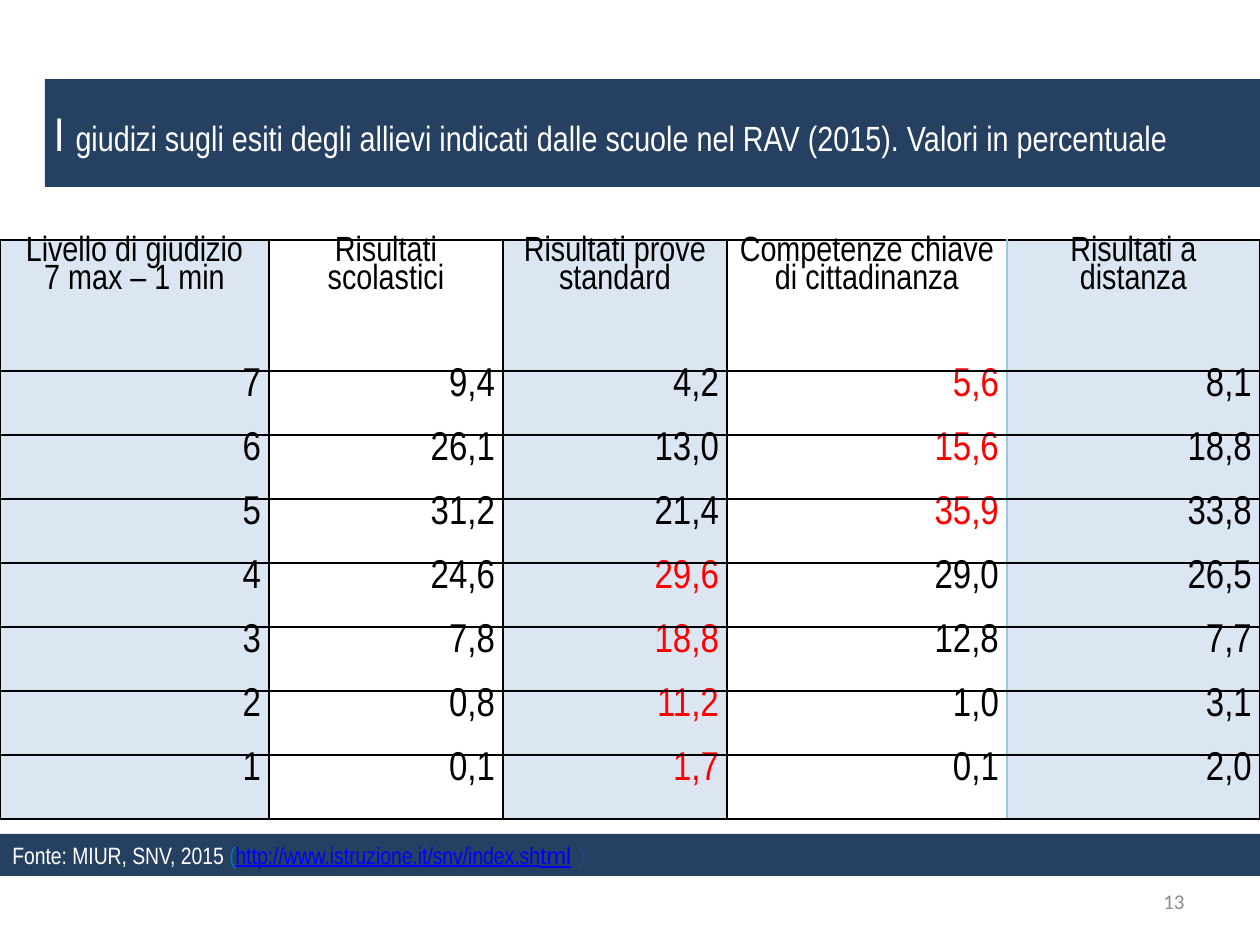
"""Builds the slide with the table of school self-assessment judgements."""
from lxml.etree import SubElement
from pptx import Presentation
from pptx.dml.color import RGBColor
from pptx.enum.shapes import MSO_SHAPE as Shape
from pptx.enum.text import MSO_ANCHOR as Anchor, MSO_AUTO_SIZE as AutoSize, PP_ALIGN as Align
from pptx.oxml.ns import qn
from pptx.util import Pt

PX = 914400 // 126
NAVY = RGBColor(0x25, 0x40, 0x61)
PALE = RGBColor(0xDC, 0xE6, 0xF2)
WHITE = RGBColor(0xFF, 0xFF, 0xFF)
BLACK = RGBColor(0x00, 0x00, 0x00)
RED = RGBColor(0xFF, 0x00, 0x00)
CYAN = RGBColor(0x93, 0xCD, 0xDD)
GREY = RGBColor(0x8C, 0x8C, 0x8C)
BLUE = RGBColor(0x00, 0x70, 0xC0)
LINK = RGBColor(0x00, 0x00, 0xFF)
DARK_BLUE = RGBColor(0x1F, 0x49, 0x7D)
NARROW = "Arial Narrow"

TITLE = [
    ("I ", dict(size=27)),
    ("giudizi sugli esiti degli allievi indicati dalle scuole nel RAV (2015). "
     "Valori in percentuale", dict(size=20)),
]
SOURCE = [
    ("Fonte: MIUR, SNV, 2015 ", {}),
    ("(", dict(color=BLUE)),
    ("http://www.istruzione.it/snv/index.sh", dict(color=LINK, underline=True)),
    ("tml", dict(color=LINK, underline=True, font="Arial")),
    (" ", dict(font="Arial")),
    (").", dict(color=DARK_BLUE, font="Arial")),
]
HEADERS = [
    ["Livello di giudizio", "7 max – 1 min"],
    ["Risultati scolastici"],
    ["Risultati prove standard"],
    ["Competenze chiave di cittadinanza"],
    ["Risultati a distanza"],
]
ROWS = [
    ("7", "9,4", "4,2", "5,6", "8,1"),
    ("6", "26,1", "13,0", "15,6", "18,8"),
    ("5", "31,2", "21,4", "35,9", "33,8"),
    ("4", "24,6", "29,6", "29,0", "26,5"),
    ("3", "7,8", "18,8", "12,8", "7,7"),
    ("2", "0,8", "11,2", "1,0", "3,1"),
    ("1", "0,1", "1,7", "0,1", "2,0"),
]
RED_LEVELS = {2: "4321", 3: "765"}
COLUMN_WIDTHS = [269, 234, 224, 280, 253]
HEADER_HEIGHT, ROW_HEIGHT = 131, 64
TABLE_TOP = 240


def px(*lengths):
    return [length * PX for length in lengths]


def add_text(paragraph, text, size=13.5, color=WHITE, font=NARROW, underline=None):
    run = paragraph.add_run()
    run.text = text
    run.font.size = Pt(size)
    run.font.name = font
    run.font.color.rgb = color
    run.font.underline = underline


def set_margins(frame, horizontal, vertical):
    frame.margin_left = frame.margin_right = horizontal * PX
    frame.margin_top = frame.margin_bottom = vertical * PX


def set_borders(cell, **colors):
    properties = cell._tc.get_or_add_tcPr()
    for index, (side, color) in enumerate(colors.items()):
        line = properties.makeelement(qn(f"a:ln{side}"), w=str(Pt(1)))
        fill = SubElement(line, qn("a:solidFill"))
        SubElement(fill, qn("a:srgbClr"), val=str(color))
        properties.insert(index, line)


def fill_cell(cell, lines, column, align, size, color=BLACK):
    set_margins(cell, 8, 0)
    if column % 2 == 0:
        cell.fill.solid()
        cell.fill.fore_color.rgb = PALE
    else:
        cell.fill.background()
    frame = cell.text_frame
    for index, line in enumerate(lines):
        paragraph = frame.add_paragraph() if index else frame.paragraphs[0]
        paragraph.alignment = align
        paragraph.line_spacing = 0.83
        add_text(paragraph, line, size=size, color=color)
    set_borders(cell, L=CYAN if column == 4 else BLACK,
                R=CYAN if column == 3 else BLACK, T=BLACK, B=BLACK)


def add_table(slide):
    height = HEADER_HEIGHT + ROW_HEIGHT * len(ROWS)
    box = px(0, TABLE_TOP, sum(COLUMN_WIDTHS), height)
    table = slide.shapes.add_table(len(ROWS) + 1, len(HEADERS), *box).table
    table.first_row = table.horz_banding = False
    for column, width in zip(table.columns, COLUMN_WIDTHS):
        column.width = width * PX
    for index, row in enumerate(table.rows):
        row.height = (ROW_HEIGHT if index else HEADER_HEIGHT) * PX
    for column, lines in enumerate(HEADERS):
        fill_cell(table.cell(0, column), lines, column, Align.CENTER, 20)
    for row, values in enumerate(ROWS, 1):
        for column, value in enumerate(values):
            color = RED if values[0] in RED_LEVELS.get(column, "") else BLACK
            fill_cell(table.cell(row, column), [value], column, Align.RIGHT, 23, color)


def format_bar(shape, runs):
    shape.fill.solid()
    shape.fill.fore_color.rgb = NAVY
    shape.line.fill.background()
    frame = shape.text_frame
    frame.auto_size = AutoSize.NONE
    frame.word_wrap = True
    frame.vertical_anchor = Anchor.MIDDLE
    paragraph = frame.paragraphs[0]
    paragraph.alignment = Align.LEFT
    for text, style in runs:
        add_text(paragraph, text, **style)


def main():
    presentation = Presentation()
    presentation.slide_width, presentation.slide_height = px(1260, 945)
    slide = presentation.slides.add_slide(presentation.slide_layouts[5])

    title = slide.shapes.title
    title.left, title.top, title.width, title.height = px(45, 79, 1215, 108)
    format_bar(title, TITLE)
    set_margins(title.text_frame, 9, 5)

    add_table(slide)

    source = slide.shapes.add_shape(Shape.RECTANGLE, *px(0, 834, 1260, 42))
    source.shadow.inherit = False
    format_bar(source, SOURCE)

    number = slide.shapes.add_textbox(*px(903, 876, 294, 50)).text_frame
    number.word_wrap = True
    number.vertical_anchor = Anchor.MIDDLE
    number.paragraphs[0].alignment = Align.RIGHT
    add_text(number.paragraphs[0], "13", size=12, color=GREY, font="Calibri")

    presentation.save("out.pptx")


if __name__ == "__main__":
    main()
